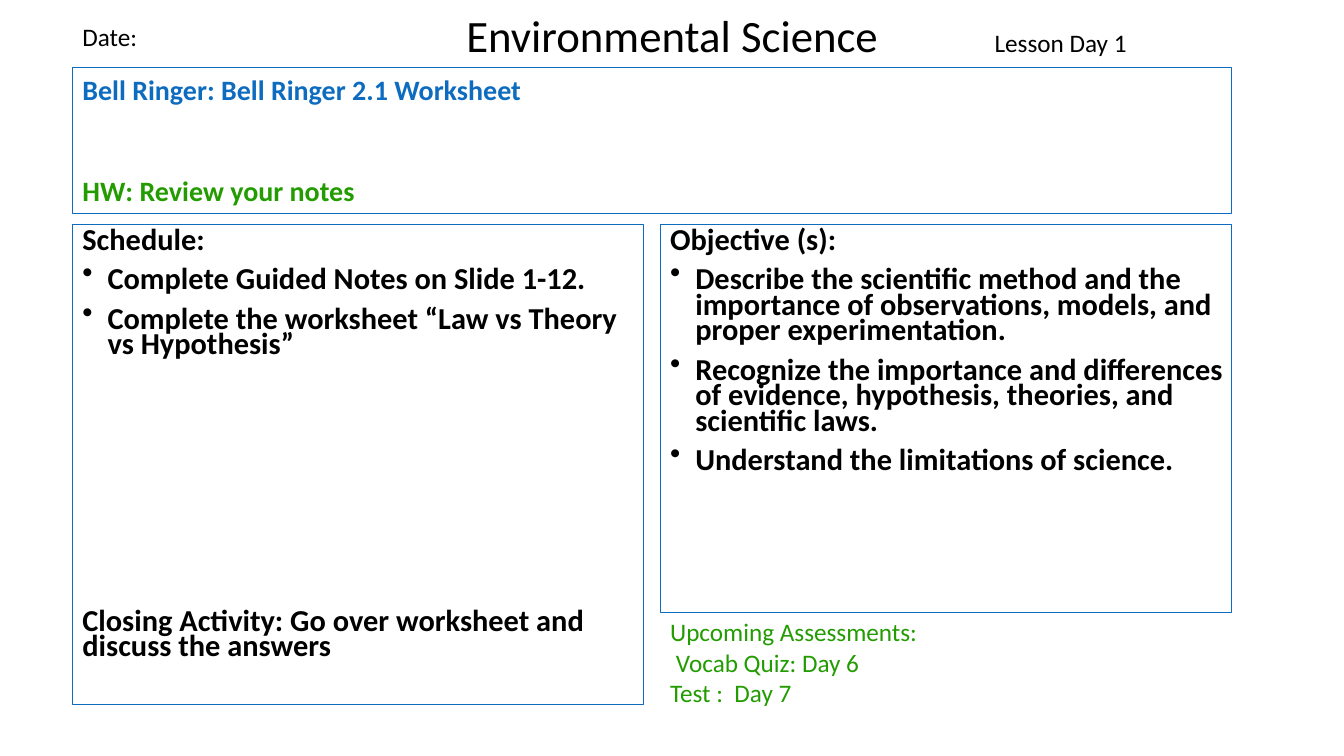
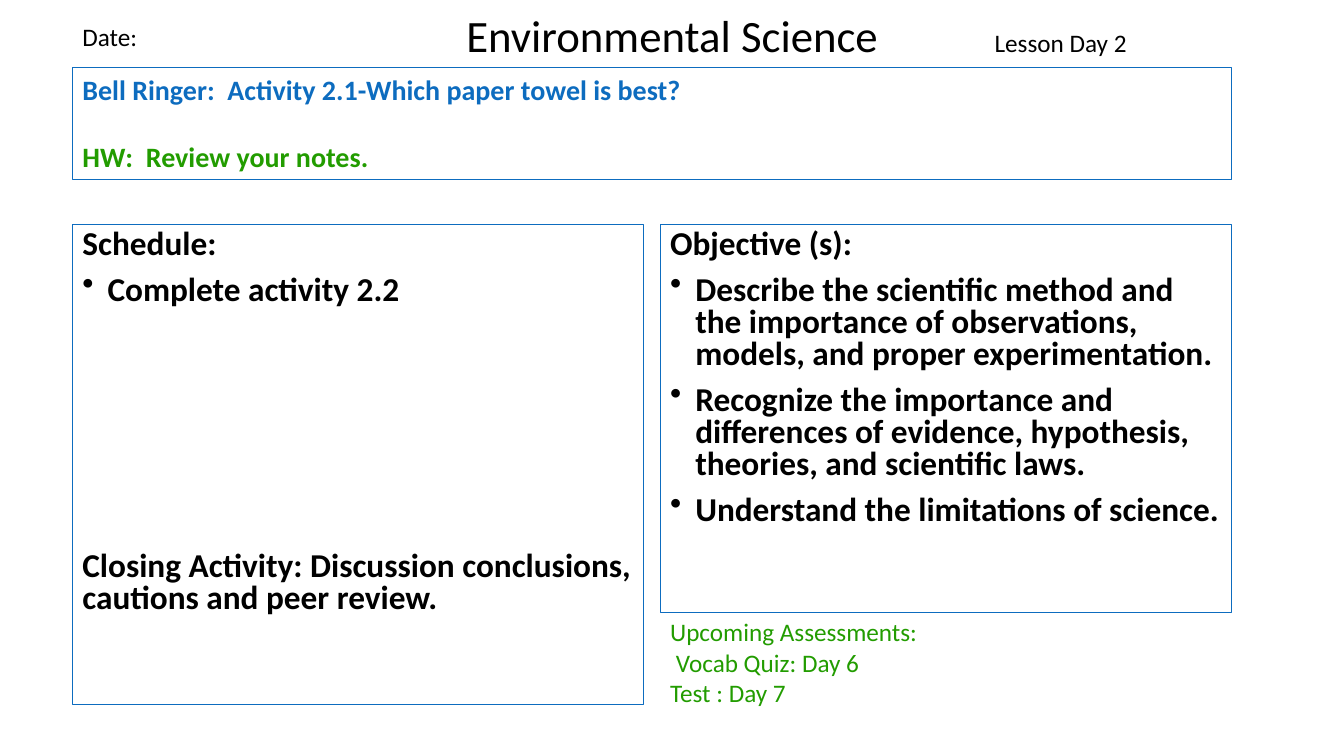
from lxml import etree
from pptx import Presentation
from pptx.dml.color import RGBColor
from pptx.enum.shapes import MSO_SHAPE
from pptx.enum.text import MSO_ANCHOR, MSO_AUTO_SIZE, PP_ALIGN
from pptx.oxml.ns import qn
from pptx.util import Pt

RECTANGLE = MSO_SHAPE.RECTANGLE
TOP = MSO_ANCHOR.TOP
NO_FIT = MSO_AUTO_SIZE.NONE
LEFT, CENTER = PP_ALIGN.LEFT, PP_ALIGN.CENTER

FONT = "Calibri"
BLACK, BLUE, GREEN = "000000", "0D6CBF", "229C00"
LINE_RATIO = 1.2  # line height of the font, in text sizes
PARA_GAP = 10
INDENT = 18
INSET = 3.6

# Page grid, in points
PAGE_WIDTH, PAGE_HEIGHT = 960, 540
MARGIN, CONTENT_WIDTH, GUTTER = 51.8, 828, 11.6
COLUMN_WIDTH = (CONTENT_WIDTH - GUTTER) / 2
RIGHT_COLUMN = MARGIN + COLUMN_WIDTH + GUTTER
BELL_TOP, BELL_LINE = 48.2, 24.3
COLUMN_TOP, SCHEDULE_HEIGHT, OBJECTIVE_HEIGHT = 160.6, 342.7, 277
ASSESSMENT_TOP = 437

OBJECTIVES = [
    "Describe the scientific method and the importance of observations, "
    "models, and proper experimentation.",
    "Recognize the importance and differences of evidence, hypothesis, "
    "theories, and scientific laws.",
    "Understand the limitations of science.",
]

# "blanks" counts the free lines in a box; "spacing" is the line spacing
LESSONS = [
    {
        "day": "Lesson Day 1",
        "bell": "Bell Ringer: Bell Ringer 2.1 Worksheet",
        "homework": "HW: Review your notes",
        "bell_blanks": 2,
        "schedule": ["Complete Guided Notes on Slide 1-12.",
                     "Complete the worksheet “Law vs Theory vs Hypothesis”"],
        "schedule_blanks": 6,
        "closing": "Closing Activity: Go over worksheet and discuss the answers",
        "test": "Test :  Day 7",
        "size": 21.7,
        "spacing": 0.7,
    },
    {
        "day": "Lesson Day 2",
        "bell": "Bell Ringer:  Activity 2.1-Which paper towel is best?",
        "homework": "HW:  Review your notes.",
        "bell_blanks": 1,
        "schedule": ["Complete activity 2.2"],
        "schedule_blanks": 5,
        "closing": "Closing Activity: Discussion conclusions, cautions and peer review.",
        "test": "Test : Day 7",
        "size": 23.8,
        "spacing": 0.8,
    },
]


def color(value):
    return RGBColor.from_string(value)


def set_frame(shape):
    frame = shape.text_frame
    frame.word_wrap = True
    frame.auto_size = NO_FIT
    frame.vertical_anchor = TOP
    frame.margin_top = frame.margin_bottom = Pt(INSET)
    return frame


def write(frame, lines, size, ink=BLACK, bold=False, align=LEFT):
    """Fill a frame with one paragraph for each line."""
    frame.text = "\n".join(lines)
    for para in frame.paragraphs:
        para.alignment = align
        for span in para.runs:
            span.font.name = FONT
            span.font.size = Pt(size)
            span.font.bold = bold
            span.font.color.rgb = color(ink)
    return frame.paragraphs


def add_bullet(para):
    properties = para._p.get_or_add_pPr()
    properties.set("marL", str(Pt(INDENT)))
    properties.set("indent", str(-Pt(INDENT)))
    etree.SubElement(properties, qn("a:buChar")).set("char", "•")


def add_label(slide, box, lines, ink=BLACK):
    label = slide.shapes.add_textbox(*map(Pt, box))
    write(set_frame(label), lines, 18, ink)


def add_panel(slide, box):
    """Outlined box without fill; returns its text frame."""
    panel = slide.shapes.add_shape(RECTANGLE, *map(Pt, box))
    panel.shadow.inherit = False
    panel.fill.background()
    panel.line.color.rgb = color(BLUE)
    panel.line.width = Pt(0.75)
    return set_frame(panel)


def add_header(slide, day):
    title = slide.shapes.title
    title.left, title.top, title.width, title.height = map(Pt, (302.4, 2.2, 355.7, 46))
    write(set_frame(title), ["Environmental Science"], 32, align=CENTER)
    add_label(slide, (MARGIN, 11.5, 250, 29), ["Date:"])
    add_label(slide, (703.4, 15.8, 137, 29), [day])


def add_bell_ringer(slide, lesson):
    blanks = lesson["bell_blanks"]
    height = (2 + blanks) * BELL_LINE + 2 * INSET
    frame = add_panel(slide, (MARGIN, BELL_TOP, CONTENT_WIDTH, height))
    paras = write(frame, [lesson["bell"], lesson["homework"]], 20, BLUE, True)
    paras[1].space_before = Pt(blanks * 20 * LINE_RATIO)
    paras[1].runs[0].font.color.rgb = color(GREEN)


def add_list_panel(slide, box, heading, items, lesson, closing=None):
    """Heading and bullets, with an optional closing line further down."""
    frame = add_panel(slide, box)
    frame.margin_right = Pt(4)
    size, spacing = lesson["size"], lesson["spacing"]
    lines = [heading, *items] + ([closing] if closing else [])
    paras = write(frame, lines, size, bold=True)
    for para in paras:
        para.line_spacing = spacing
        para.space_before = Pt(PARA_GAP)
    if closing:
        row = size * LINE_RATIO * spacing + PARA_GAP
        paras[-1].space_before = Pt(round(lesson["schedule_blanks"] * row + PARA_GAP, 1))
    for para in paras[1:len(items) + 1]:
        add_bullet(para)


def add_lesson(deck, lesson):
    slide = deck.slides.add_slide(deck.slide_layouts[5])
    add_header(slide, lesson["day"])
    add_bell_ringer(slide, lesson)
    add_list_panel(slide, (MARGIN, COLUMN_TOP, COLUMN_WIDTH, SCHEDULE_HEIGHT),
                   "Schedule:", lesson["schedule"], lesson, lesson["closing"])
    add_list_panel(slide, (RIGHT_COLUMN, COLUMN_TOP, COLUMN_WIDTH, OBJECTIVE_HEIGHT),
                   "Objective (s):", OBJECTIVES, lesson)
    add_label(slide, (RIGHT_COLUMN, ASSESSMENT_TOP, COLUMN_WIDTH, 72.7),
              ["Upcoming Assessments:", " Vocab Quiz: Day 6", lesson["test"]], GREEN)


def main():
    deck = Presentation()
    deck.slide_width, deck.slide_height = Pt(PAGE_WIDTH), Pt(PAGE_HEIGHT)
    for lesson in LESSONS:
        add_lesson(deck, lesson)
    deck.save("out.pptx")


if __name__ == "__main__":
    main()
